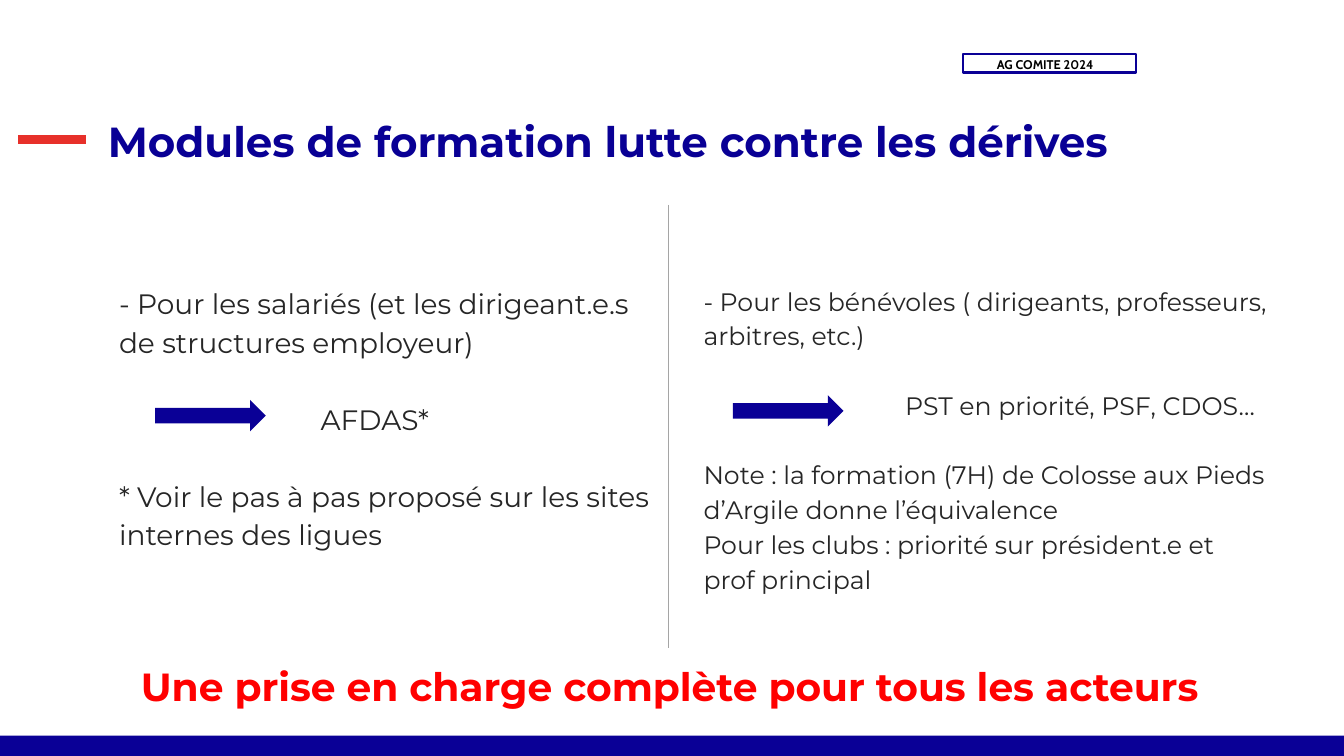
from pptx import Presentation
from pptx import util as u
from pptx.dml.color import RGBColor
from pptx.enum import shapes, text
from pptx.oxml.ns import qn
from lxml import etree

Cm, Pt = u.Cm, u.Pt
NAVY = RGBColor(0x0A, 0x00, 0x96)
TITLE = RGBColor(0x09, 0x00, 0x95)
DASH = RGBColor(0xE7, 0x30, 0x2A)
GREY = RGBColor(0xA5, 0xA5, 0xA5)
DARK = RGBColor(0x26, 0x26, 0x26)
RED = RGBColor(0xFF, 0x00, 0x00)
BLACK = RGBColor(0x00, 0x00, 0x00)
SANS = "Montserrat"
WIDE, HIGH = 33.87, 19.05
NEAR, FAR = 0.28, 5.36

label = "AG COMITE 2024"
title = "Modules de formation lutte contre les dérives"
closing = "Une prise en charge complète pour tous les acteurs"
columns = [
    {"left": 2.72, "width": 13.67, "size": 20, "gap": 27.5, "arrow": (3.91, 10.08),
     "lines": [
         ("- Pour les salariés (et les dirigeant.e.s de structures employeur)", NEAR, False),
         ("AFDAS*", FAR, True),
         ("* Voir le pas à pas proposé sur les sites internes des ligues", NEAR, True)]},
    {"left": 17.45, "width": 14.53, "size": 18, "gap": 24.8, "arrow": (18.47, 9.96),
     "lines": [
         ("- Pour les bénévoles ( dirigeants, professeurs, arbitres, etc.)", NEAR, False),
         ("PST en priorité, PSF, CDOS…", FAR, True),
         ("Note : la formation (7H) de Colosse aux Pieds d’Argile donne l’équivalence", NEAR, True),
         ("Pour les clubs : priorité sur président.e et prof principal", NEAR, False)]},
]

deck = Presentation()
deck.slide_width, deck.slide_height = Cm(WIDE), Cm(HIGH)
slide = deck.slides.add_slide(deck.slide_layouts[6])


def add_block(kind, left, top, width, height):
    block = slide.shapes.add_shape(kind, Cm(left), Cm(top), Cm(width), Cm(height))
    block.shadow.inherit = False
    block.fill.solid()
    block.fill.fore_color.rgb = NAVY
    block.line.fill.background()
    return block


def add_line(x1, y1, x2, y2, color, weight):
    line = slide.shapes.add_connector(
        shapes.MSO_CONNECTOR.STRAIGHT, Cm(x1), Cm(y1), Cm(x2), Cm(y2))
    line.line.color.rgb = color
    line.line.width = Pt(weight)
    etree.SubElement(line._element.spPr, qn("a:effectLst"))


def set_frame(frame, anchor=text.MSO_ANCHOR.TOP, inset=0):
    frame.word_wrap = True
    frame.vertical_anchor = anchor
    frame.margin_left = frame.margin_right = Cm(inset)
    frame.margin_top = frame.margin_bottom = Cm(inset / 2)
    return frame


def add_box(left, top, width, height, **style):
    box = slide.shapes.add_textbox(Cm(left), Cm(top), Cm(width), Cm(height))
    return set_frame(box.text_frame, **style)


def write(para, words, size, color, face=SANS, bold=False, indent=0, spacing=1.0):
    para.text = words
    para.alignment = text.PP_ALIGN.LEFT
    para.line_spacing = spacing
    para._p.get_or_add_pPr().set("marL", str(int(Cm(indent))))
    font = para.font
    font.name, font.size, font.bold = face, Pt(size), bold
    font.color.rgb = color


add_block(shapes.MSO_SHAPE.RECTANGLE, 0, 18.54, WIDE, HIGH - 18.54)

tag = add_block(shapes.MSO_SHAPE.RECTANGLE, 24.26, 1.37, 4.37, 0.46)
tag.fill.background()
tag.line.color.rgb = NAVY
tag.line.width = Pt(1.5)
frame = set_frame(tag.text_frame, anchor=text.MSO_ANCHOR.MIDDLE)
write(frame.paragraphs[0], label, 9, BLACK, face="Cabin", bold=True,
      indent=0.86, spacing=1.15)

add_line(0.46, 3.51, 2.16, 3.51, DASH, 6)
add_line(16.84, 5.16, 16.84, 16.33, GREY, 0.25)

for col in columns:
    frame = add_box(col["left"], 7.09, col["width"], 9.1)
    for i, (words, indent, apart) in enumerate(col["lines"]):
        para = frame.add_paragraph() if i else frame.paragraphs[0]
        write(para, words, col["size"], DARK, indent=indent, spacing=1.15)
        if apart:
            para.space_before = Pt(col["gap"])
    add_block(shapes.MSO_SHAPE.RIGHT_ARROW, *col["arrow"], 2.79, 0.79)

frame = add_box(2.72, 2.74, 28.4, 1.45, anchor=text.MSO_ANCHOR.BOTTOM)
write(frame.paragraphs[0], title, 30, TITLE, bold=True, spacing=0.9)

frame = add_box(3.02, 16.56, 27.79, 1.45, inset=0.25)
write(frame.paragraphs[0], closing, 28, RED, bold=True, indent=NEAR)

deck.save("out.pptx")
